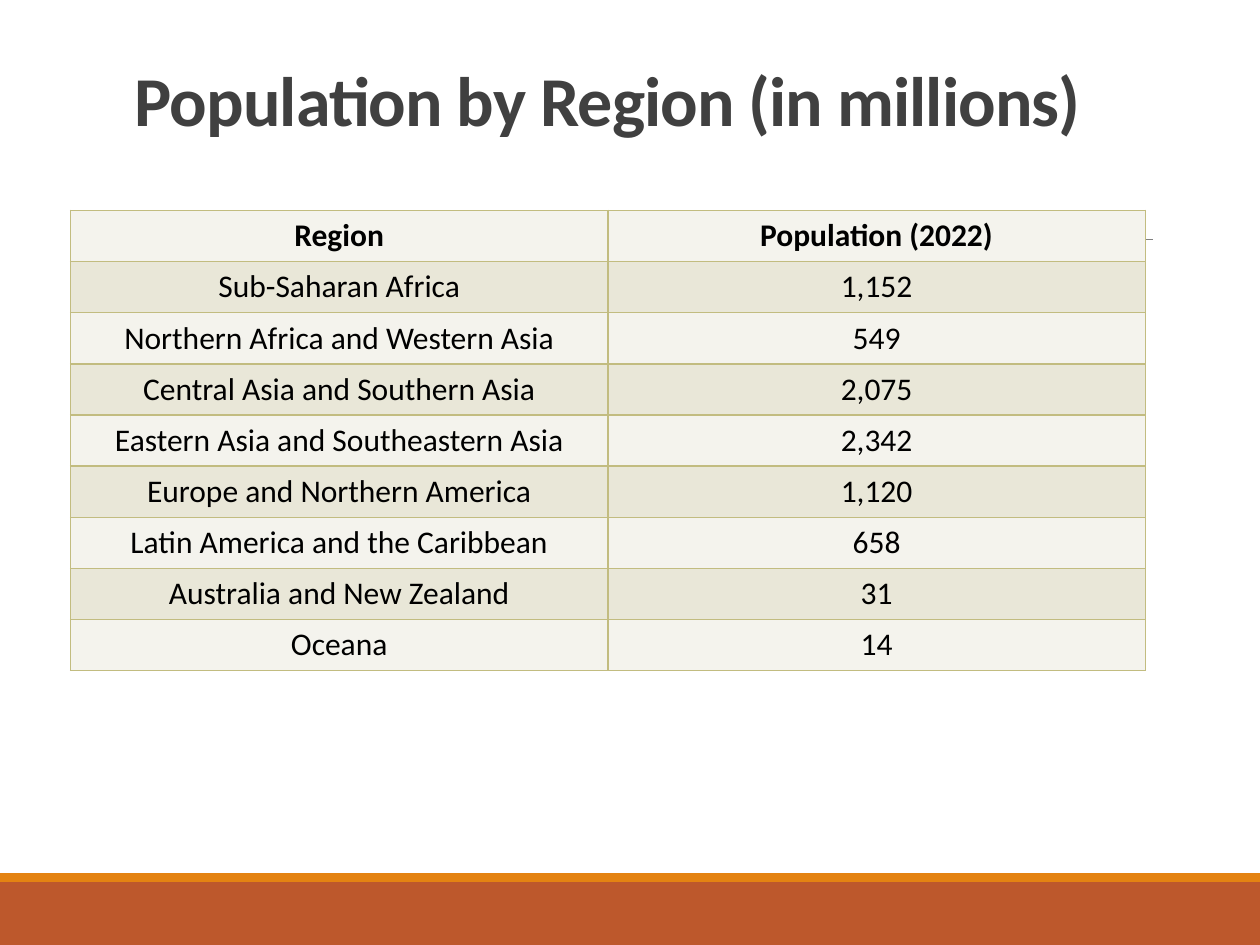
from lxml.etree import SubElement
from pptx import Presentation
from pptx.dml.color import RGBColor
from pptx.enum.shapes import MSO_CONNECTOR, MSO_SHAPE
from pptx.enum.text import MSO_ANCHOR, MSO_AUTO_SIZE, PP_ALIGN
from pptx.oxml import parse_xml
from pptx.oxml.ns import nsdecls, qn
from pptx.util import Inches, Pt

TITLE = "Population by Region (in millions)"
ROWS = [
    ("Region", "Population (2022)"),
    ("Sub-Saharan Africa", "1,152"),
    ("Northern Africa and Western Asia", "549"),
    ("Central Asia and Southern Asia", "2,075"),
    ("Eastern Asia and Southeastern Asia", "2,342"),
    ("Europe and Northern America", "1,120"),
    ("Latin America and the Caribbean", "658"),
    ("Australia and New Zealand", "31"),
    ("Oceana", "14"),
]
COLORS = {
    "rust": "BD582C", "orange": "E48312", "rule": "808080", "title": "404040",
    "text": "000000", "border": "C2BC80", "light": "F4F3ED", "dark": "E9E7D8",
}
FONT = "Calibri"
LEFT, WIDTH = 0.56, 8.53
TABLE_TOP, ROW_HEIGHT = 1.67, 0.406


def color(name):
    return RGBColor.from_string(COLORS[name])


def style_paragraph(paragraph, size, color_name, bold):
    paragraph.alignment = PP_ALIGN.CENTER
    font = paragraph.font
    font.name, font.size, font.bold = FONT, Pt(size), bold
    font.color.rgb = color(color_name)


def add_band(page, top, height, color_name):
    band = page.shapes.add_shape(
        MSO_SHAPE.RECTANGLE, 0, Inches(top), Inches(10), Inches(height))
    band.shadow.inherit = False
    band.fill.solid()
    band.fill.fore_color.rgb = color(color_name)
    band.line.fill.background()


def add_borders(cell):
    properties = cell._tc.get_or_add_tcPr()
    for index, side in enumerate(("lnL", "lnR", "lnT", "lnB")):
        properties.insert(index, parse_xml(
            f'<a:{side} {nsdecls("a")} w="{Pt(1)}"><a:solidFill>'
            f'<a:srgbClr val="{COLORS["border"]}"/></a:solidFill></a:{side}>'))


deck = Presentation()
deck.slide_width, deck.slide_height = Inches(10), Inches(7.5)
page = deck.slides.add_slide(deck.slide_layouts[5])

# Footer bands and title rule
add_band(page, 7, 0.5, "rust")
add_band(page, 6.93, 0.07, "orange")
rule = page.shapes.add_connector(
    MSO_CONNECTOR.STRAIGHT, Inches(0.98), Inches(1.9), Inches(9.15), Inches(1.9))
rule.line.color.rgb = color("rule")
rule.line.width = Pt(0.5)
SubElement(rule._element.spPr, qn("a:effectLst"))

# Title
title = page.shapes.title
title.left, title.top = Inches(LEFT), Inches(0.42)
title.width, title.height = Inches(WIDTH), Inches(0.75)
frame = title.text_frame
frame.text = TITLE
frame.word_wrap = True
frame.auto_size = MSO_AUTO_SIZE.NONE
frame.vertical_anchor = MSO_ANCHOR.BOTTOM
heading = frame.paragraphs[0]
style_paragraph(heading, 40, "title", True)
heading.line_spacing = 0.85
heading.runs[0].font._element.set("spc", "-50")

# Population table, with alternating row fills
table = page.shapes.add_table(
    len(ROWS), len(ROWS[0]), Inches(LEFT), Inches(TABLE_TOP),
    Inches(WIDTH), Inches(ROW_HEIGHT * len(ROWS))).table
for row_index, values in enumerate(ROWS):
    for column_index, value in enumerate(values):
        cell = table.cell(row_index, column_index)
        cell.text = value
        style_paragraph(cell.text_frame.paragraphs[0], 18, "text", row_index == 0)
        cell.fill.solid()
        cell.fill.fore_color.rgb = color("dark" if row_index % 2 else "light")
        add_borders(cell)

deck.save("out.pptx")
